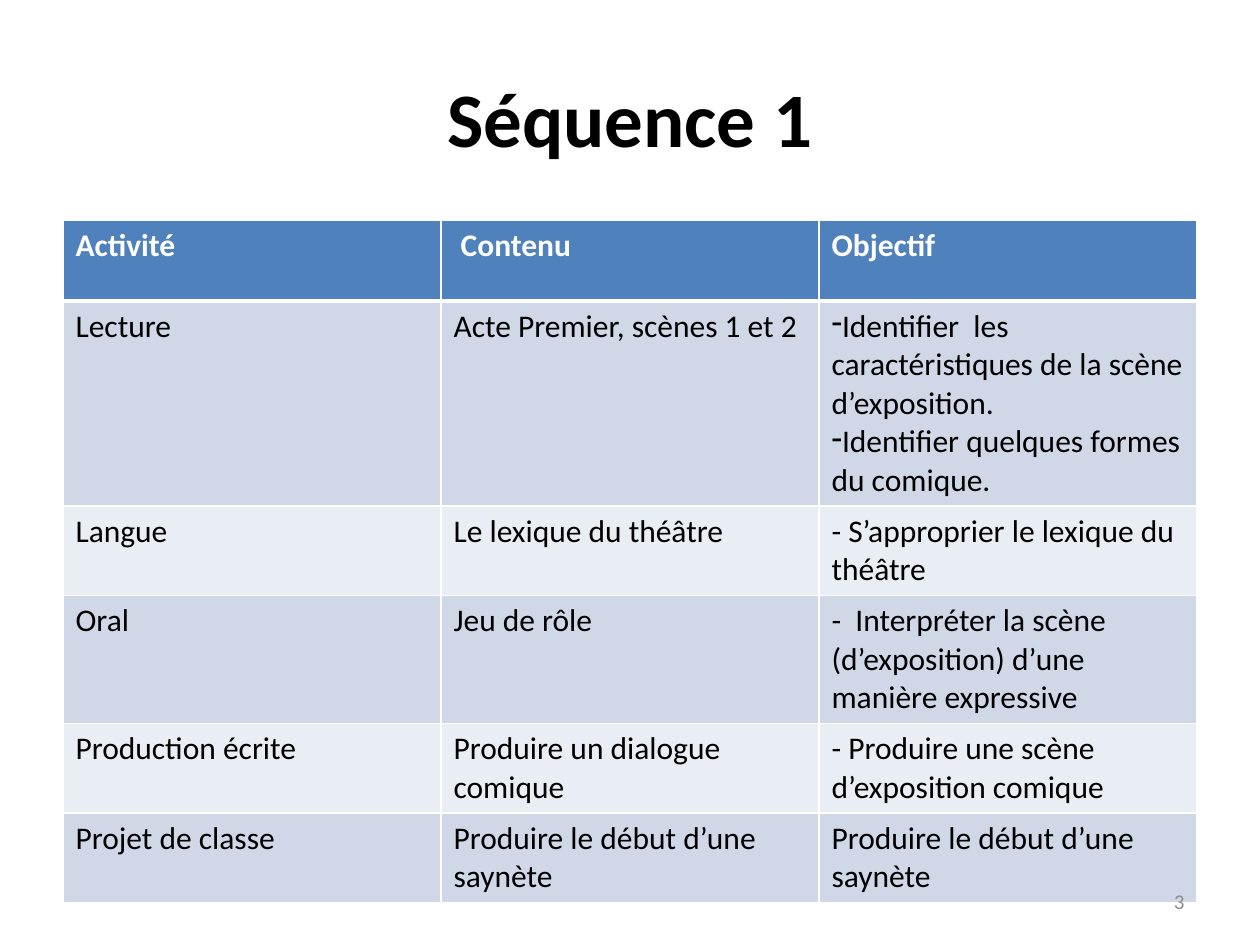
import pptx
import pptx.dml.color
import pptx.enum.text
import pptx.oxml
import pptx.oxml.ns
import pptx.util

RGBColor = pptx.dml.color.RGBColor
PP_ALIGN = pptx.enum.text.PP_ALIGN
MSO_ANCHOR = pptx.enum.text.MSO_ANCHOR

BLACK = RGBColor(0x00, 0x00, 0x00)
WHITE = RGBColor(0xFF, 0xFF, 0xFF)
GRAY = RGBColor(0x8C, 0x8C, 0x8C)
HEADER_BLUE = RGBColor(0x4F, 0x81, 0xBD)
BAND_DARK = RGBColor(0xD0, 0xD8, 0xE8)
BAND_LIGHT = RGBColor(0xE9, 0xED, 0xF4)

PX_PER_INCH = 126
FONT = "Calibri"
THIN, THICK = 1, 3

# A cell given as a tuple is a dash list
ROWS = [
    ["Activité", " Contenu", "Objectif"],
    ["Lecture", "Acte Premier, scènes 1 et 2",
     ("Identifier  les caractéristiques de la scène d’exposition.",
      "Identifier quelques formes du comique.")],
    ["Langue", "Le lexique du théâtre", "- S’approprier le lexique du théâtre"],
    ["Oral", "Jeu de rôle",
     "-  Interpréter la scène (d’exposition) d’une manière expressive"],
    ["Production écrite", "Produire un dialogue comique",
     "- Produire une scène d’exposition comique"],
    ["Projet de classe", "Produire le début d’une saynète",
     "Produire le début d’une saynète"],
]


def px(length):
    return pptx.util.Emu(round(length * 914400 / PX_PER_INCH))


class SlideBuilder:
    def __init__(self, page):
        self.page = page

    def style(self, frame, size, color, bold=False, align=PP_ALIGN.LEFT):
        for para in frame.paragraphs:
            para.alignment = align
            for span in para.runs:
                span.font.name = FONT
                span.font.size = pptx.util.Pt(size)
                span.font.bold = bold
                span.font.color.rgb = color

    def place(self, box, left, top, width, height):
        box.left, box.top = px(left), px(top)
        box.width, box.height = px(width), px(height)

    def title(self, text, *area):
        box = self.page.shapes.title
        self.place(box, *area)
        box.text_frame.text = text
        box.text_frame.vertical_anchor = MSO_ANCHOR.MIDDLE
        self.style(box.text_frame, 44, BLACK, True, PP_ALIGN.CENTER)

    def page_number(self, text, *area):
        box = self.page.shapes.add_textbox(*map(px, area))
        frame = box.text_frame
        frame.word_wrap = True
        frame.vertical_anchor = MSO_ANCHOR.MIDDLE
        frame.text = text
        self.style(frame, 12, GRAY, align=PP_ALIGN.RIGHT)

    def borders(self, cell, top, bottom):
        properties = cell._tc.get_or_add_tcPr()
        for side, width in (("L", THIN), ("R", THIN), ("T", top), ("B", bottom)):
            properties.append(pptx.oxml.parse_xml(
                f'<a:ln{side} {pptx.oxml.ns.nsdecls("a")} w="{pptx.util.Pt(width)}">'
                f'<a:solidFill><a:srgbClr val="{WHITE}"/></a:solidFill></a:ln{side}>'))

    def dash(self, para):
        para._p.get_or_add_pPr().append(pptx.oxml.parse_xml(
            f'<a:buChar {pptx.oxml.ns.nsdecls("a")} char="-"/>'))

    def table(self, rows, left, top, width, row_height):
        frame = self.page.shapes.add_table(
            len(rows), len(rows[0]), px(left), px(top),
            px(width), px(row_height * len(rows)))
        for r, row in enumerate(rows):
            header = r == 0
            band = BAND_DARK if r % 2 else BAND_LIGHT
            for c, content in enumerate(row):
                cell = frame.table.cell(r, c)
                self.borders(cell, THICK if r == 1 else THIN,
                             THICK if header else THIN)
                cell.fill.solid()
                cell.fill.fore_color.rgb = HEADER_BLUE if header else band
                is_list = isinstance(content, tuple)
                cell.text_frame.text = "\n".join(content) if is_list else content
                self.style(cell.text_frame, 18, WHITE if header else BLACK, header)
                if is_list:
                    for para in cell.text_frame.paragraphs:
                        self.dash(para)


def main():
    deck = pptx.Presentation()
    deck.slide_width, deck.slide_height = px(1260), px(945)
    title_only = deck.slide_layouts[5]
    builder = SlideBuilder(deck.slides.add_slide(title_only))

    # Heading
    builder.title("Séquence 1", 63, 38, 1134, 158)
    # Activities of the sequence
    builder.table(ROWS, 63, 220, 1134, 81)
    # Footer
    builder.page_number("3", 903, 876, 294, 50)

    deck.save("out.pptx")


if __name__ == "__main__":
    main()
